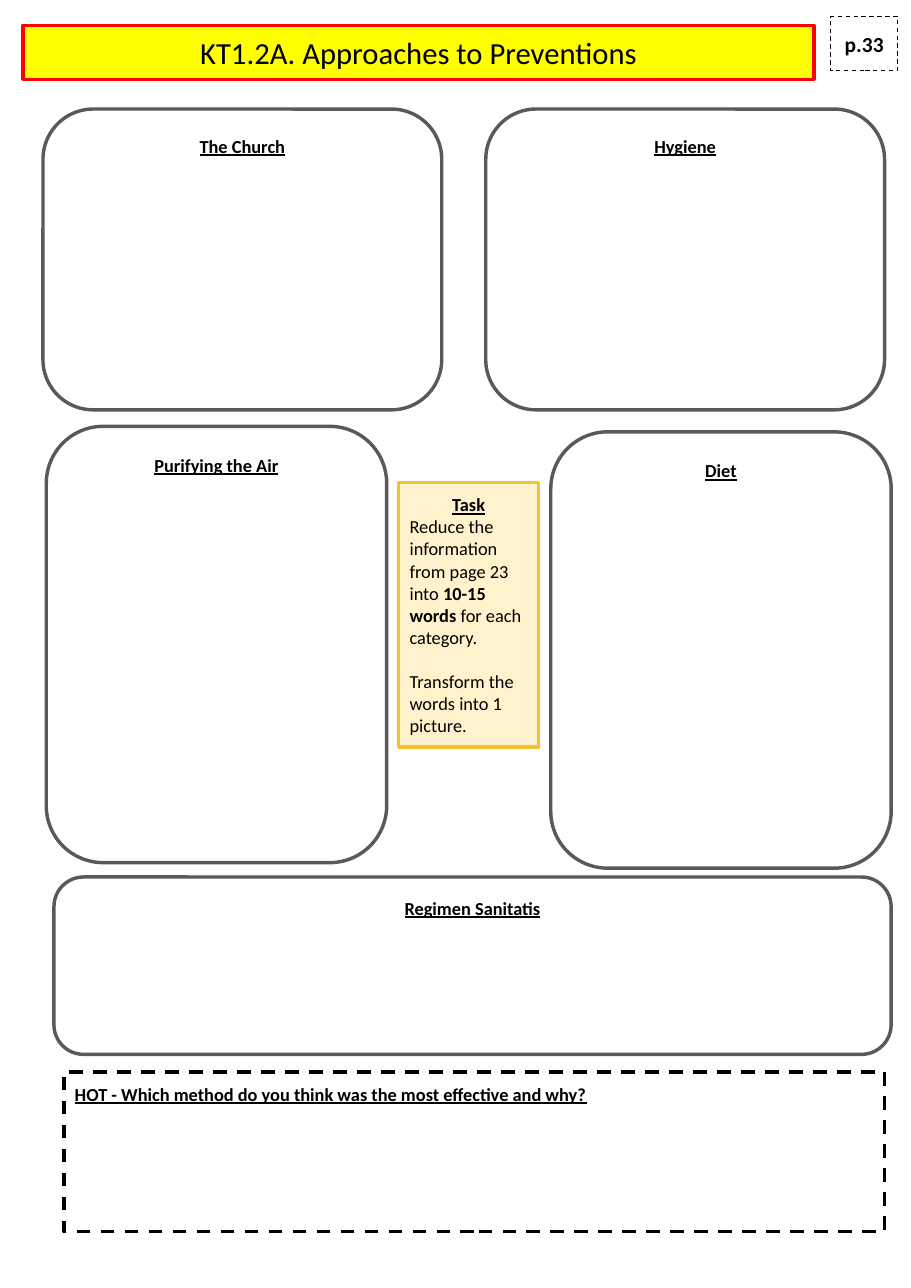
from pptx import Presentation
from pptx.dml.color import RGBColor
from pptx.enum.dml import MSO_LINE
from pptx.enum.shapes import MSO_SHAPE
from pptx.enum.text import MSO_ANCHOR, PP_ALIGN
from pptx.util import Inches, Pt

RECT = MSO_SHAPE.RECTANGLE
ROUNDED = MSO_SHAPE.ROUNDED_RECTANGLE
DASH = MSO_LINE.DASH
LEFT, CENTER = PP_ALIGN.LEFT, PP_ALIGN.CENTER
TOP, MIDDLE = MSO_ANCHOR.TOP, MSO_ANCHOR.MIDDLE


def color(hex_code):
    return RGBColor.from_string(hex_code)


def add_run(paragraph, text, size=12, bold=False, underline=False):
    run = paragraph.add_run()
    run.text = text
    font = run.font
    font.name = "Calibri"
    font.size = Pt(size)
    font.bold = bold
    font.underline = underline
    font.color.rgb = color("000000")


class Worksheet:
    outline = "595959"
    inset = Inches(0.1)

    def __init__(self, slide):
        self.slide = slide

    def box(self, kind, bounds, line, fill=None, weight=2.25, dash=None, anchor=TOP):
        shape = self.slide.shapes.add_shape(kind, *map(Inches, bounds))
        shape.shadow.inherit = False
        if fill:
            shape.fill.solid()
            shape.fill.fore_color.rgb = color(fill)
        else:
            shape.fill.background()
        shape.line.color.rgb = color(line)
        shape.line.width = Pt(weight)
        if dash:
            shape.line.dash_style = dash
        frame = shape.text_frame
        frame.word_wrap = True
        frame.vertical_anchor = anchor
        frame.margin_left = frame.margin_right = self.inset
        frame.margin_top = frame.margin_bottom = self.inset
        return shape

    def label(self, text, bounds, line, align=CENTER, size=12, bold=True,
              underline=False, **style):
        shape = self.box(RECT, bounds, line, **style)
        paragraph = shape.text_frame.paragraphs[0]
        paragraph.alignment = align
        add_run(paragraph, text, size=size, bold=bold, underline=underline)

    def category(self, heading, bounds):
        shape = self.box(ROUNDED, bounds, self.outline)
        shape.adjustments[0] = 0.167
        paragraph = shape.text_frame.paragraphs[0]
        paragraph.alignment = CENTER
        add_run(paragraph, heading, bold=True, underline=True)

    def task(self, heading, instructions, bounds):
        frame = self.box(RECT, bounds, "F1C232", fill="FFF2CC").text_frame
        title = frame.paragraphs[0]
        title.alignment = CENTER
        add_run(title, heading, bold=True, underline=True)
        for gap, runs in instructions:
            paragraph = frame.add_paragraph()
            paragraph.alignment = LEFT
            paragraph.space_before = Pt(gap)
            for text, bold in runs:
                add_run(paragraph, text, bold=bold)


def main():
    prs = Presentation()
    prs.slide_width, prs.slide_height = Inches(8.27), Inches(11.69)
    sheet = Worksheet(prs.slides.add_slide(prs.slide_layouts[6]))

    sheet.label("KT1.2A. Approaches to Preventions", (0.21, 0.23, 7.18, 0.49),
                "FF0000", fill="FFFF00", size=20, bold=False, anchor=MIDDLE)

    categories = [
        ("The Church", (0.39, 0.99, 3.62, 2.73)),
        ("Hygiene", (4.41, 0.99, 3.62, 2.73)),
        ("Diet", (5, 3.92, 3.09, 3.96)),
        ("Purifying the Air", (0.42, 3.87, 3.09, 3.96)),
        ("Regimen Sanitatis", (0.49, 7.96, 7.6, 1.61)),
    ]
    for heading, bounds in categories:
        sheet.category(heading, bounds)

    instructions = [
        (0, [("Reduce the information from page 23 into ", False),
             ("10-15 words", True),
             (" for each category.", False)]),
        (14.4, [("Transform the words into 1 picture.", False)]),
    ]
    sheet.task("Task", instructions, (3.62, 4.38, 1.27, 2.4))

    sheet.label("HOT - Which method do you think was the most effective and why?",
                (0.58, 9.73, 7.45, 1.45), "000000", align=LEFT, underline=True,
                dash=DASH)
    sheet.label("p.33", (7.54, 0.15, 0.61, 0.49), "000000", size=14,
                fill="FFFFFF", weight=0.75, dash=DASH, anchor=MIDDLE)

    prs.save("out.pptx")


if __name__ == "__main__":
    main()
